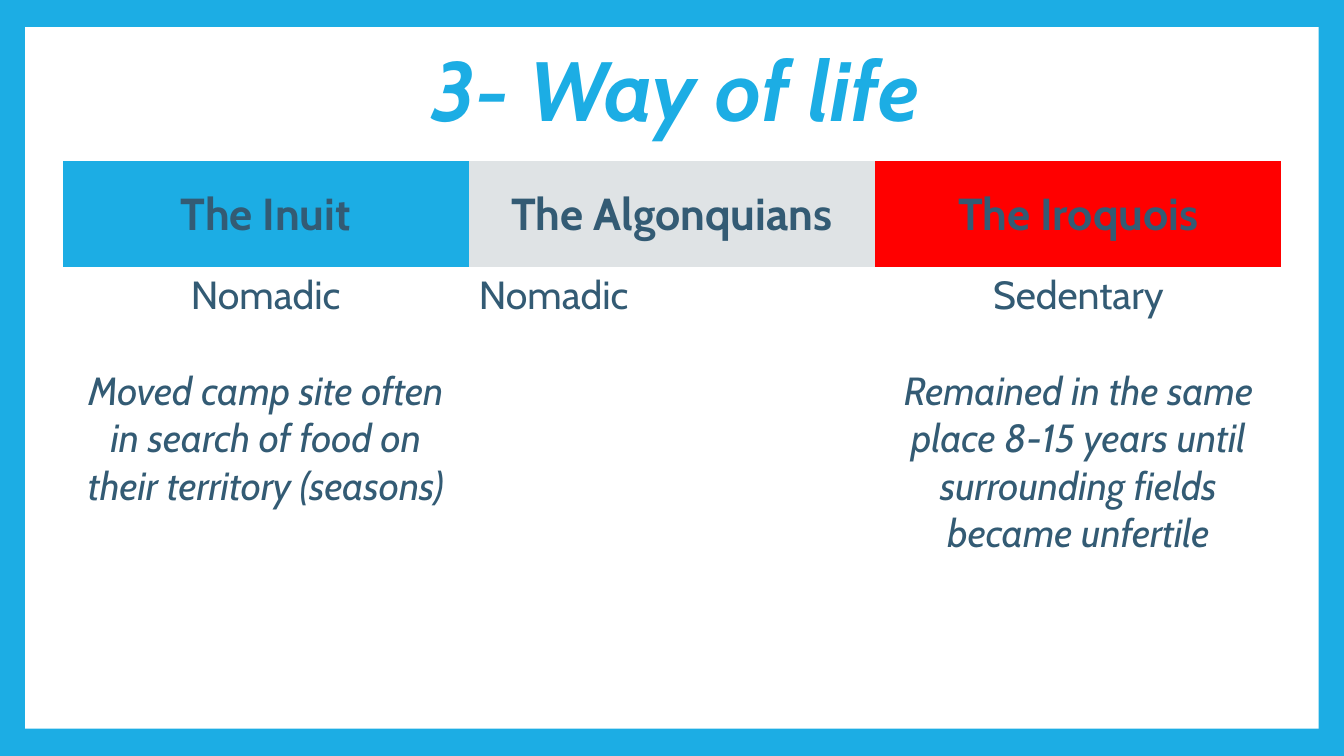
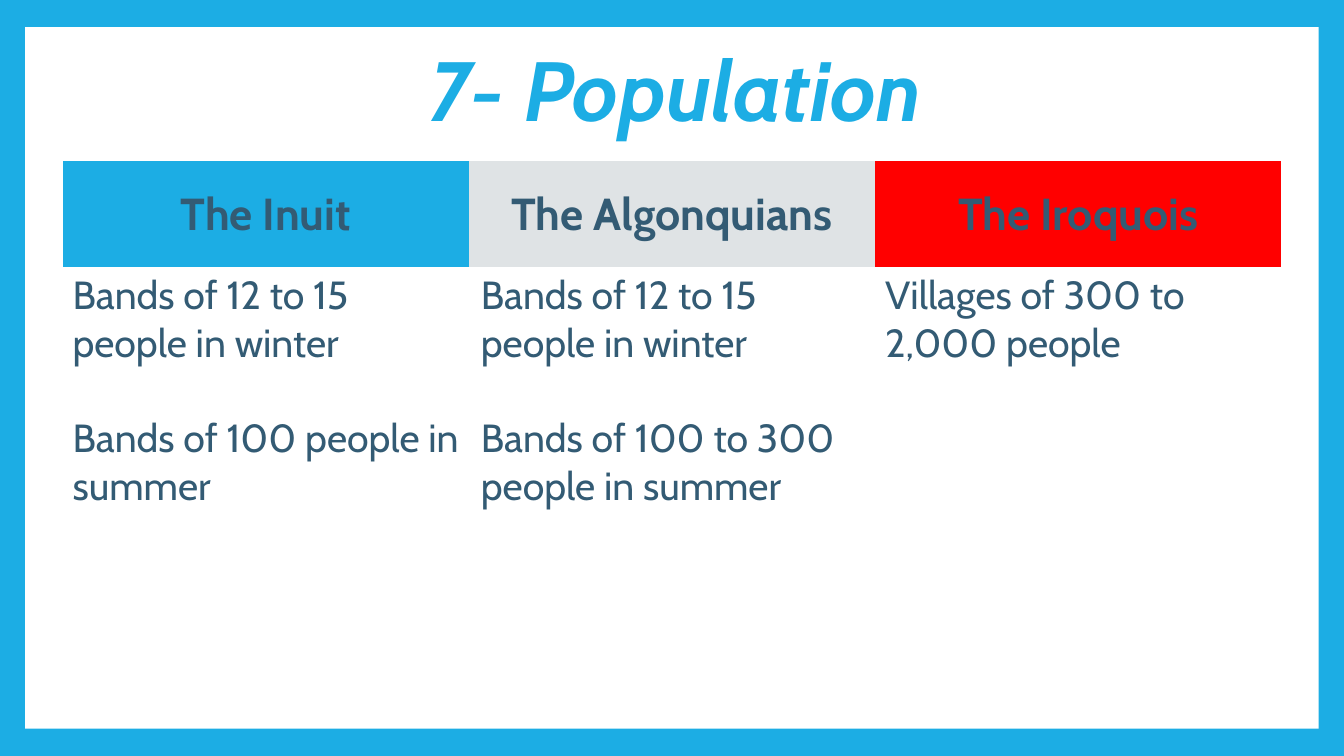
"""Build two slides comparing the Inuit, the Algonquians and the Iroquois."""
from pptx import Presentation
from pptx.dml.color import RGBColor
from pptx.enum.shapes import MSO_SHAPE
from pptx.enum.text import MSO_ANCHOR, MSO_AUTO_SIZE, PP_ALIGN
from pptx.util import Inches, Pt

RECTANGLE = MSO_SHAPE.RECTANGLE
MIDDLE, TOP = MSO_ANCHOR.MIDDLE, MSO_ANCHOR.TOP
CENTER, LEFT = PP_ALIGN.CENTER, PP_ALIGN.LEFT
NO_AUTOFIT = MSO_AUTO_SIZE.NONE

FONT = "Cabin"
BLUE, GREY, RED, WHITE, SLATE = "1CADE4", "DFE3E5", "FF0000", "FFFFFF", "335B74"
PLAIN_TABLE_STYLE = "{2D5ABB26-0587-4C30-8999-92F81FD0307C}"

WIDTH, HEIGHT = 13.33, 7.5
FRAME_X, FRAME_Y = 0.25, 0.27
TITLE_WIDTH, TITLE_HEIGHT = 10.8, 1.33
TABLE_TOP = FRAME_Y + TITLE_HEIGHT
COLUMN_WIDTH, HEADER_HEIGHT, BODY_HEIGHT = 4.03, 1.05, 3.2
TABLE_WIDTH = 3 * COLUMN_WIDTH
BODY_SIZE, LINE_GAP = 28, 34

PEOPLES = [("The Inuit", BLUE), ("The Algonquians", GREY), ("The Iroquois", RED)]
WINTER = "Bands of 12 to 15 people in winter"
SLIDES = [
    {
        "title": "3- Way of life",
        "second_italic": True,
        "columns": [
            (["Nomadic", "Moved camp site often\vin search of food on\vtheir territory (seasons)"], CENTER, 0.1),
            (["Nomadic"], LEFT, 0.1),
            (["Sedentary", "Remained in the same\vplace 8-15 years until\vsurrounding fields\vbecame unfertile"], CENTER, 0.1),
        ],
    },
    {
        "title": "7- Population",
        "second_italic": False,
        "columns": [
            ([WINTER, "Bands of 100 people in summer"], LEFT, 0.1),
            ([WINTER, "Bands of 100 to 300 people in summer"], LEFT, 0.12),
            (["Villages of 300 to 2,000 people"], LEFT, 0.1),
        ],
    },
]


def paint(target, color):
    """Give a fill or a font a solid colour from a hex string."""
    if hasattr(target, "solid"):
        target.solid()
        target.fore_color.rgb = RGBColor.from_string(color)
    else:
        target.color.rgb = RGBColor.from_string(color)


def write(paragraph, text, size=BODY_SIZE, color=SLATE, bold=False, italic=False,
          align=LEFT, before=0, spacing=1.0):
    """Fill a paragraph with formatted text."""
    paragraph.text = text
    paragraph.alignment = align
    paragraph.space_before = Pt(before)
    paragraph.line_spacing = spacing
    for run in paragraph.runs:
        run.font.name = FONT
        run.font.size = Pt(size)
        run.font.bold = bold
        run.font.italic = italic
        paint(run.font, color)


presentation = Presentation()
presentation.slide_width, presentation.slide_height = Inches(WIDTH), Inches(HEIGHT)
master = presentation.slide_master
title_only = presentation.slide_layouts.get_by_name("Title Only")
paint(master.background.fill, BLUE)

for number, content in enumerate(SLIDES):
    slide = presentation.slides.add_slide(title_only)

    if number == 0:
        panel = slide.shapes.add_shape(
            RECTANGLE, Inches(FRAME_X), Inches(FRAME_Y),
            Inches(WIDTH - 2 * FRAME_X), Inches(HEIGHT - 2 * FRAME_Y))
        panel.shadow.inherit = False
        panel.line.fill.background()
        paint(panel.fill, WHITE)
        master.shapes._spTree.insert(2, panel._element)

    title = slide.shapes.title
    title.left, title.top = Inches(1.3), Inches(FRAME_Y)
    title.width, title.height = Inches(TITLE_WIDTH), Inches(TITLE_HEIGHT)
    title.text_frame.auto_size = NO_AUTOFIT
    title.text_frame.vertical_anchor = MIDDLE
    write(title.text_frame.paragraphs[0], content["title"], size=60, color=BLUE,
          bold=True, italic=True, align=CENTER, spacing=0.9)

    table = slide.shapes.add_table(
        2, 3, Inches((WIDTH - TABLE_WIDTH) / 2), Inches(TABLE_TOP),
        Inches(TABLE_WIDTH), Inches(HEADER_HEIGHT + BODY_HEIGHT)).table
    table.first_row = table.horz_banding = False
    table._tbl.tblPr[0].text = PLAIN_TABLE_STYLE
    table.rows[0].height = Inches(HEADER_HEIGHT)
    table.rows[1].height = Inches(BODY_HEIGHT)

    for column, ((people, color), (facts, align, inset)) in enumerate(zip(PEOPLES, content["columns"])):
        header, body = table.cell(0, column), table.cell(1, column)
        header.vertical_anchor, body.vertical_anchor = MIDDLE, TOP
        paint(header.fill, color)
        paint(body.fill, WHITE)
        write(header.text_frame.paragraphs[0], people, size=32, bold=True, align=CENTER)
        body.margin_left = Inches(inset)
        for row, fact in enumerate(facts):
            paragraph = body.text_frame.add_paragraph() if row else body.text_frame.paragraphs[0]
            write(paragraph, fact, align=align, before=LINE_GAP * row,
                  italic=row > 0 and content["second_italic"])

presentation.save("out.pptx")
